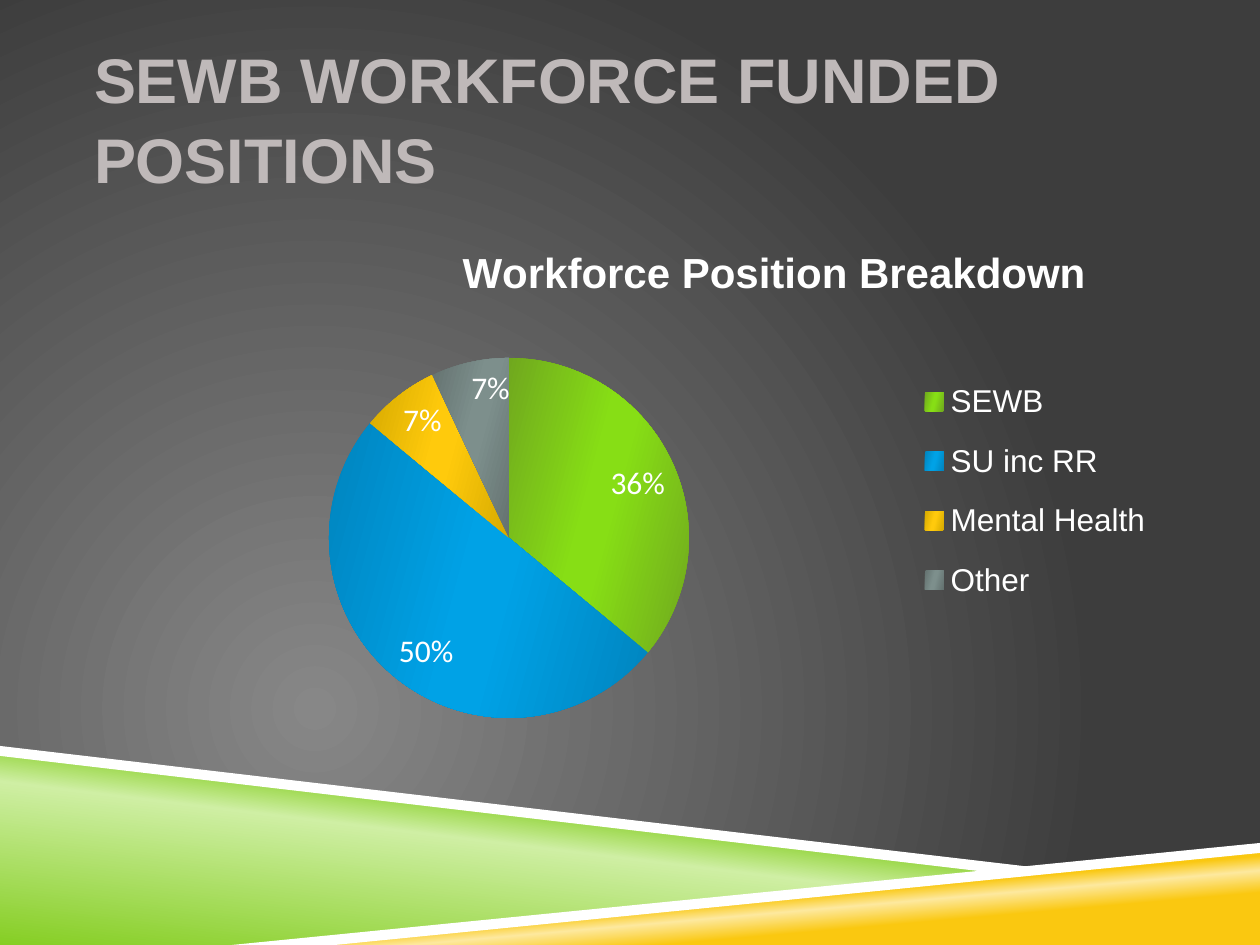
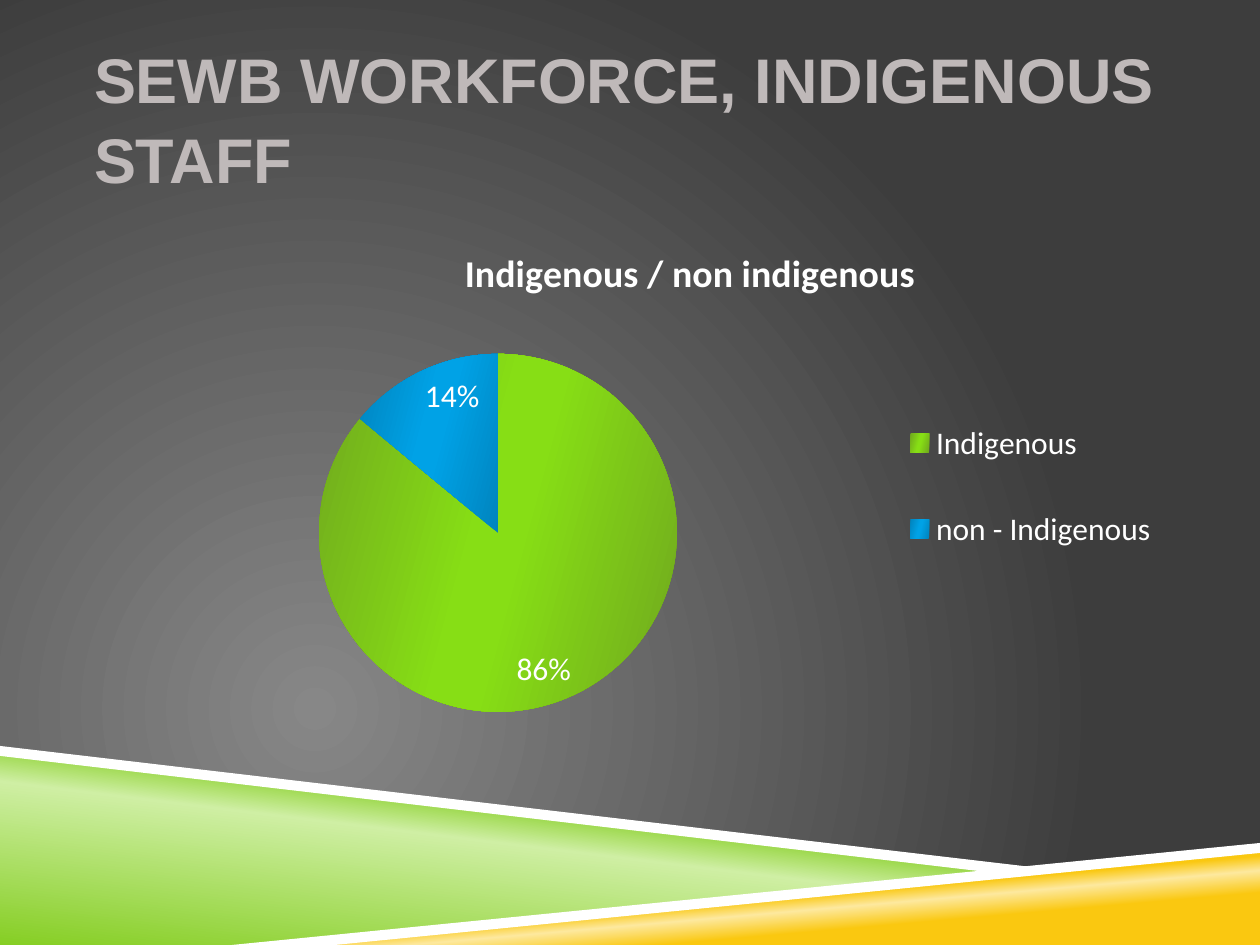
from dataclasses import dataclass

from lxml import etree
from pptx import Presentation
from pptx import util as u
from pptx.chart.data import CategoryChartData
from pptx.dml.color import RGBColor
from pptx.enum import chart as ch
from pptx.enum import text
from pptx.oxml.ns import qn

SLIDE_W, SLIDE_H = 1260, 945
PX = u.Inches(10) / SLIDE_W

WHITE = RGBColor(0xFF, 0xFF, 0xFF)
TITLE_GREY = RGBColor(0xBF, 0xB9, 0xB9)
GLOW = RGBColor(0x87, 0x87, 0x87)
CHARCOAL = RGBColor(0x3D, 0x3D, 0x3D)
GREEN = RGBColor(0x86, 0xCE, 0x24)
PALE_GREEN = RGBColor(0xCF, 0xEF, 0xA4)
YELLOW = RGBColor(0xFA, 0xC8, 0x10)
PALE_YELLOW = RGBColor(0xFD, 0xE9, 0x9F)
SLICE_SHADES = [
    (RGBColor(0x70, 0xA8, 0x1E), RGBColor(0x87, 0xDE, 0x15)),
    (RGBColor(0x00, 0x84, 0xBE), RGBColor(0x00, 0xA2, 0xE6)),
    (RGBColor(0xD6, 0xAA, 0x00), RGBColor(0xFF, 0xCA, 0x0C)),
    (RGBColor(0x64, 0x72, 0x70), RGBColor(0x7D, 0x8F, 0x8C)),
]
HEADING_FONT, CHART_FONT = "Arial", "Calibri"
TITLE_BOX = (94, 38, 1071, 157)


@dataclass
class Breakdown:
    """Content and layout of one pie slide; inner boxes are relative to chart_box."""

    heading: str
    chart_title: str
    title_font: str
    title_size: float
    legend_font: str
    shares: dict
    chart_box: tuple
    title_at: tuple
    pie_box: tuple
    legend_box: tuple


BREAKDOWNS = [
    Breakdown("SEWB WORKFORCE FUNDED POSITIONS", "Workforce Position Breakdown",
              HEADING_FONT, 24, HEADING_FONT,
              {"SEWB": 36, "SU inc RR": 50, "Mental Health": 7, "Other": 7},
              (94, 220, 1071, 514), (361, 18), (235, 138, 360, 360), (818, 140, 246, 262)),
    Breakdown("SEWB WORKFORCE, INDIGENOUS STAFF", "Indigenous / non indigenous",
              CHART_FONT, 21.6, CHART_FONT,
              {"Indigenous": 86, "non - Indigenous": 14},
              (94, 214, 1071, 514), (364, 25), (225, 140, 358, 358), (808, 162, 257, 220)),
]


def emu(box):
    """Turn px lengths into EMU."""
    return [u.Emu(round(length * PX)) for length in box]


def set_gradient(fill, owner, stops, angle=None):
    """Fill with colour stops along an angle, or as the glow circle without one."""
    fill.gradient()
    gradient = owner.find(".//" + qn("a:gradFill"))
    for child in list(gradient):
        gradient.remove(child)
    stop_list = etree.SubElement(gradient, qn("a:gsLst"))
    for percent, colour in stops:
        stop = etree.SubElement(stop_list, qn("a:gs"), pos=str(percent * 1000))
        etree.SubElement(stop, qn("a:srgbClr"), val=str(colour))
    if angle is None:
        circle = etree.SubElement(gradient, qn("a:path"))
        circle.set("path", "circle")
        etree.SubElement(circle, qn("a:fillToRect"), l="50000", t="100000", r="100000", b="50000")
    else:
        etree.SubElement(gradient, qn("a:lin"), ang=str(angle * 60000), scaled="0")


def add_band(slide, master, corners):
    """Draw a closed band and move it to the master."""
    builder = slide.shapes.build_freeform(*corners[0], scale=PX)
    builder.add_line_segments(corners[1:], close=True)
    band = builder.convert_to_shape()
    band.shadow.inherit = False
    band.line.fill.background()
    master.shapes.element.append(band.element)
    return band


def decorate_master(slide, master):
    """Give the master its glow and the crossing bands at the foot."""
    set_gradient(master.background.fill, master.element, [(0, GLOW), (100, CHARCOAL)])
    green_band = add_band(slide, master, [(0, 752), (998, 872), (252, SLIDE_H), (0, SLIDE_H)])
    set_gradient(green_band.fill, green_band.element,
                 [(0, GREEN), (52, PALE_GREEN), (66, GREEN)], 277)
    yellow_band = add_band(slide, master, [(249, SLIDE_H), (SLIDE_W, 847), (SLIDE_W, SLIDE_H)])
    set_gradient(yellow_band.fill, yellow_band.element,
                 [(28, YELLOW), (40, PALE_YELLOW), (48, YELLOW)], 265)
    for edge in ([(0, 746), (0, 756), (995, 873), (1048, 869)],
                 [(SLIDE_W, 843), (232, SLIDE_H), (335, SLIDE_H), (SLIDE_W, 853)]):
        stripe = add_band(slide, master, edge)
        stripe.fill.solid()
        stripe.fill.fore_color.rgb = WHITE


def set_heading(slide, heading, box):
    """Place and format the slide title."""
    title = slide.shapes.title
    title.left, title.top, title.width, title.height = emu(box)
    frame = title.text_frame
    frame.text = heading
    frame.word_wrap = True
    frame.auto_size = text.MSO_AUTO_SIZE.NONE
    frame.vertical_anchor = text.MSO_ANCHOR.MIDDLE
    frame.margin_left = frame.margin_right = 0
    line = frame.paragraphs[0]
    line.alignment = text.PP_ALIGN.LEFT
    line.line_spacing = 1.05
    line.font.name, line.font.size, line.font.bold = HEADING_FONT, u.Pt(36), True
    line.font.color.rgb = TITLE_GREY


def place_part(part, index, box, chart_box, inner=False):
    """Fix a chart part at a px box relative to the chart."""
    for old in part.findall(qn("c:layout")):
        part.remove(old)
    layout = etree.Element(qn("c:layout"))
    manual = etree.SubElement(layout, qn("c:manualLayout"))
    if inner:
        etree.SubElement(manual, qn("c:layoutTarget"), val="inner")
    for axis in "xy":
        etree.SubElement(manual, qn(f"c:{axis}Mode"), val="edge")
    for side, length, whole in zip("xywh", box, chart_box[2:] * 2):
        etree.SubElement(manual, qn(f"c:{side}"), val=f"{length / whole:.4f}")
    part.insert(index, layout)


def add_pie(slide, breakdown):
    """Add the pie with its title, legend and percent labels."""
    data = CategoryChartData()
    data.categories = list(breakdown.shares)
    data.add_series("Series 1", list(breakdown.shares.values()))
    box = breakdown.chart_box
    chart = slide.shapes.add_chart(ch.XL_CHART_TYPE.PIE, *emu(box), data).chart
    chart.font.name, chart.font.size = CHART_FONT, u.Pt(18)
    chart.font.color.rgb = WHITE

    chart.has_title = True
    chart.chart_title.include_in_layout = False
    title_frame = chart.chart_title.text_frame
    title_frame.text = breakdown.chart_title
    title_font = title_frame.paragraphs[0].font
    title_font.name, title_font.size = breakdown.title_font, u.Pt(breakdown.title_size)
    title_font.bold = True
    title_font.color.rgb = WHITE

    chart.has_legend = True
    chart.legend.position = ch.XL_LEGEND_POSITION.RIGHT
    chart.legend.include_in_layout = False
    legend_font = chart.legend.font
    legend_font.name, legend_font.size = breakdown.legend_font, u.Pt(18)
    legend_font.color.rgb = WHITE

    plot = chart.plots[0]
    plot.vary_by_categories = True
    series = plot.series[0]
    for index, (edge, middle) in enumerate(SLICE_SHADES[:len(breakdown.shares)]):
        fill = series.points[index].format.fill
        fill.solid()
        slice_element = chart.element.findall(".//" + qn("c:dPt"))[index]
        set_gradient(fill, slice_element,
                     [(0, edge), (45, middle), (55, middle), (100, edge)], 15)
    labels = series.data_labels
    labels.show_percentage, labels.show_value = True, False
    labels.number_format, labels.number_format_is_linked = "0%", False
    labels.position = ch.XL_LABEL_POSITION.INSIDE_END
    labels.font.name, labels.font.size = CHART_FONT, u.Pt(18)
    labels.font.color.rgb = WHITE

    root = chart.element.find(qn("c:chart"))
    place_part(root.find(qn("c:title")), 1, breakdown.title_at, box)
    place_part(root.find(qn("c:plotArea")), 0, breakdown.pie_box, box, inner=True)
    place_part(root.find(qn("c:legend")), 1, breakdown.legend_box, box)


def main():
    """Build and save the deck."""
    deck = Presentation()
    deck.slide_width, deck.slide_height = emu((SLIDE_W, SLIDE_H))
    for number, breakdown in enumerate(BREAKDOWNS):
        slide = deck.slides.add_slide(deck.slide_layouts[5])
        if number == 0:
            decorate_master(slide, deck.slide_master)
        set_heading(slide, breakdown.heading, TITLE_BOX)
        add_pie(slide, breakdown)
    deck.save("out.pptx")


if __name__ == "__main__":
    main()
